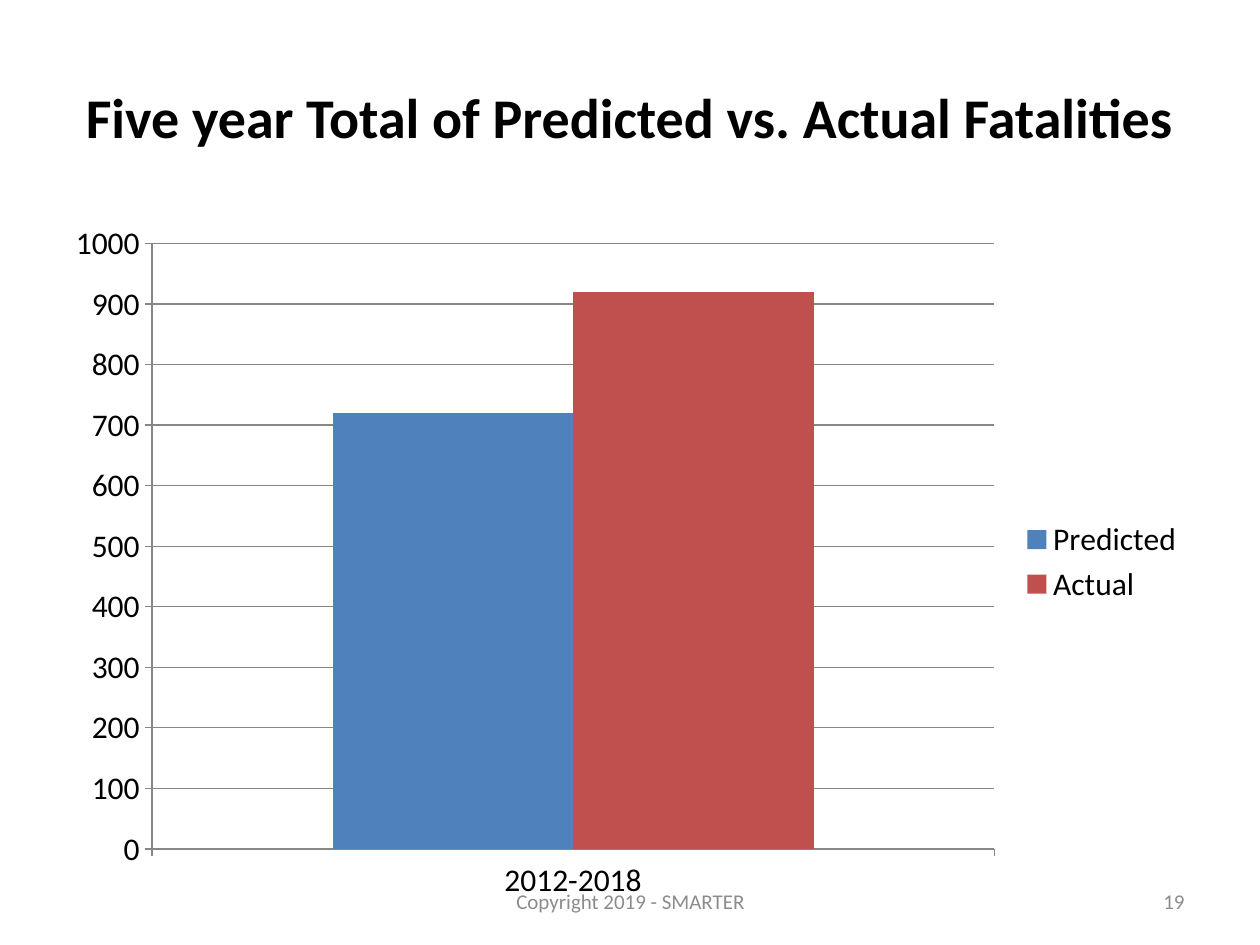
from dataclasses import dataclass

import pptx
import pptx.chart.data
import pptx.dml.color
import pptx.enum.chart
import pptx.enum.text
import pptx.slide
import pptx.util

Inches = pptx.util.Inches
Align = pptx.enum.text.PP_ALIGN
RGBColor = pptx.dml.color.RGBColor

BLACK = RGBColor(0x00, 0x00, 0x00)
GRAY = RGBColor(0x8C, 0x8C, 0x8C)
AXIS_GRAY = RGBColor(0x86, 0x86, 0x86)
BLUE = RGBColor(0x4F, 0x81, 0xBD)
RED = RGBColor(0xC0, 0x50, 0x4D)
FONT = "Calibri"


@dataclass(frozen=True)
class Area:
    left: float
    top: float
    width: float
    height: float

    def lengths(self) -> tuple:
        return tuple(map(Inches, (self.left, self.top, self.width, self.height)))


@dataclass(frozen=True)
class Series:
    name: str
    total: int
    color: RGBColor


FATALITIES = (Series("Predicted", 720, BLUE), Series("Actual", 920, RED))


def add_text(page: pptx.slide.Slide, text: str, *, area: Area, size: float,
             color: RGBColor, align: Align, bold: bool = False) -> None:
    box = page.shapes.add_textbox(*area.lengths())
    frame = box.text_frame
    frame.word_wrap = True
    frame.vertical_anchor = pptx.enum.text.MSO_ANCHOR.MIDDLE
    para = frame.paragraphs[0]
    para.alignment = align
    span = para.add_run()
    span.text = text
    span.font.name = FONT
    span.font.size = pptx.util.Pt(size)
    span.font.bold = bold
    span.font.color.rgb = color


def add_fatalities_chart(page: pptx.slide.Slide, area: Area) -> None:
    data = pptx.chart.data.CategoryChartData()
    data.categories = ["2012-2018"]
    for entry in FATALITIES:
        data.add_series(entry.name, [entry.total])
    chart = page.shapes.add_chart(
        pptx.enum.chart.XL_CHART_TYPE.COLUMN_CLUSTERED, *area.lengths(), data
    ).chart
    chart.has_title = False
    chart.font.name = FONT
    chart.font.size = pptx.util.Pt(18)
    chart.font.color.rgb = BLACK
    chart.has_legend = True
    chart.legend.position = pptx.enum.chart.XL_LEGEND_POSITION.RIGHT
    chart.legend.include_in_layout = False

    plot = chart.plots[0]
    plot.gap_width = 150
    plot.vary_by_categories = False
    for series, entry in zip(plot.series, FATALITIES):
        series.format.fill.solid()
        series.format.fill.fore_color.rgb = entry.color

    values = chart.value_axis
    values.minimum_scale = 0
    values.maximum_scale = 1000
    values.major_unit = 100
    values.has_major_gridlines = True
    for axis in (chart.category_axis, values):
        axis.major_tick_mark = pptx.enum.chart.XL_TICK_MARK.OUTSIDE
    for item in (chart.category_axis, values, values.major_gridlines):
        item.format.line.color.rgb = AXIS_GRAY
        item.format.line.width = pptx.util.Pt(0.75)


def main() -> None:
    deck = pptx.Presentation()
    deck.slide_width = Inches(10)
    deck.slide_height = Inches(7.5)
    page = deck.slides.add_slide(deck.slide_layouts[6])
    add_text(page, "Five year Total of Predicted vs. Actual Fatalities",
             area=Area(0.5, 0.3, 9, 1.25), size=32, color=BLACK,
             align=Align.CENTER, bold=True)
    add_fatalities_chart(page, Area(0.42, 1.67, 9.08, 5.58))
    add_text(page, "Copyright 2019 - SMARTER", area=Area(3.42, 6.95, 3.17, 0.4),
             size=12, color=GRAY, align=Align.CENTER)
    add_text(page, "19", area=Area(7.17, 6.95, 2.33, 0.4),
             size=12, color=GRAY, align=Align.RIGHT)
    deck.save("out.pptx")


if __name__ == "__main__":
    main()
